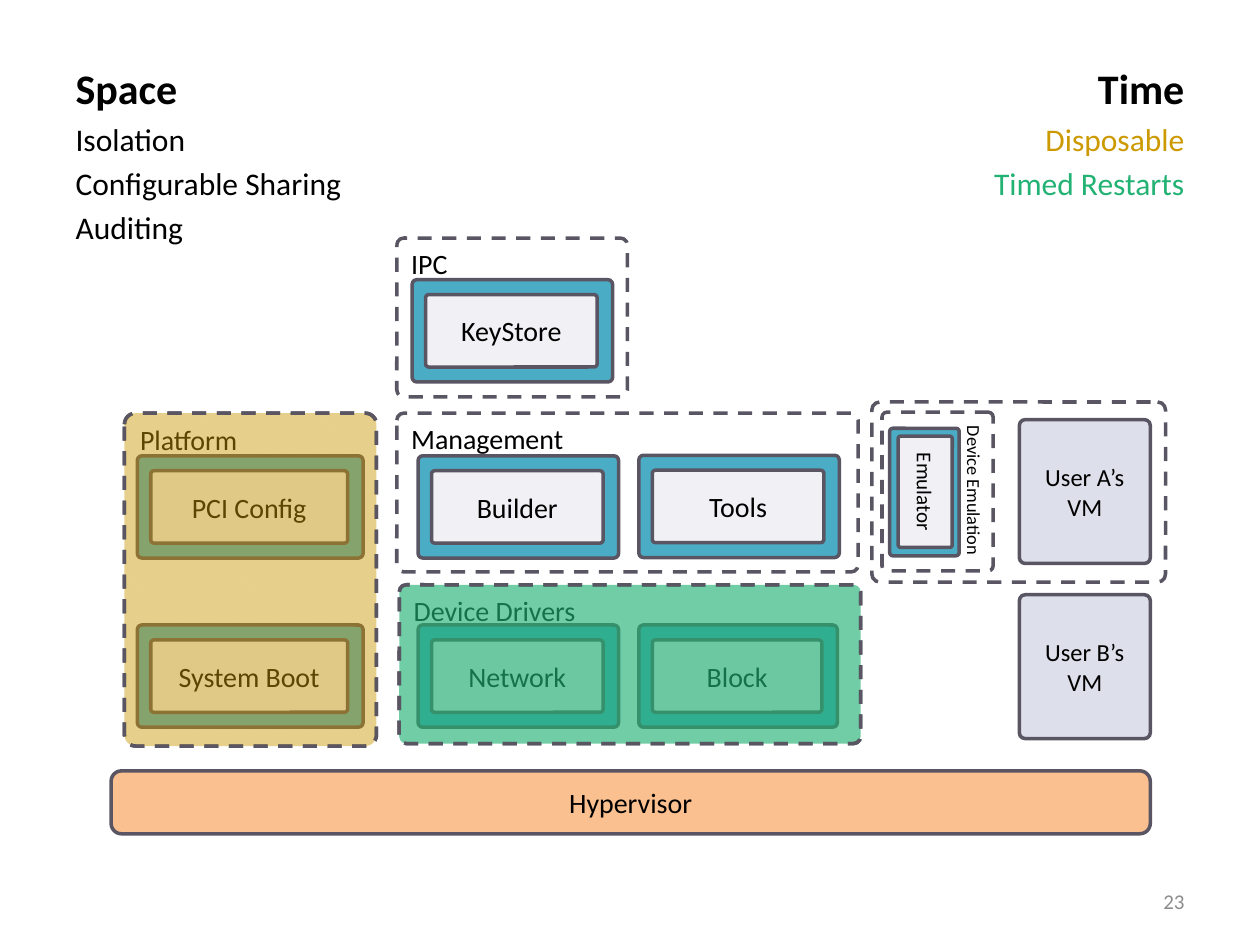
from lxml import etree
from pptx import Presentation
from pptx.dml.color import RGBColor
from pptx.enum.dml import MSO_LINE as Dash, MSO_PATTERN as Pattern
from pptx.enum.shapes import MSO_SHAPE as Shape
from pptx.enum.text import MSO_ANCHOR as Anchor, MSO_AUTO_SIZE as Fit, PP_ALIGN as Align
from pptx.oxml.ns import qn
from pptx.util import Cm, Pt

hue = RGBColor.from_string
BLACK, EDGE, PALE, WHITE = "000000", "595562", "F1F1F5", "FFFFFF"
BLUE, LILAC, PEACH = "4BACC6", "DDDFEA", "FAC090"
GOLD, GREEN, GREY = "CC9900", "22B273", "8C8C8C"


def style(par, size, color=BLACK, align=Align.LEFT, bold=False):
    """Align a paragraph and set the font of its runs."""
    par.alignment = align
    for run in par.runs:
        font = run.font
        font.name, font.size, font.bold = "Calibri", Pt(size), bold
        font.color.rgb = hue(color)


def box(at, fill=None, text="", size=16, group=False, turn=0, adj=0.044):
    """Add a rounded box; a group has a dashed edge and its label at top left."""
    shape = slide.shapes.add_shape(Shape.ROUNDED_RECTANGLE, *map(Cm, at))
    shape.shadow.inherit = False
    shape.adjustments[0] = adj
    shape.rotation = turn
    if fill:
        shape.fill.solid()
        shape.fill.fore_color.rgb = hue(fill)
    else:
        shape.fill.background()
    shape.line.color.rgb = hue(EDGE)
    shape.line.width = Pt(2)
    if group:
        shape.line.dash_style = Dash.DASH
    if text:
        frame = shape.text_frame
        frame.text = text
        frame.word_wrap = True
        frame.vertical_anchor = Anchor.TOP if group else Anchor.MIDDLE
        style(frame.paragraphs[0], size, align=Align.LEFT if group else Align.CENTER)
    return shape


deck = Presentation()
deck.slide_width, deck.slide_height = Cm(25.4), Cm(19.05)
slide = deck.slides.add_slide(deck.slide_layouts[3])
title, left, right = slide.placeholders
title.element.getparent().remove(title.element)

# Two lists at the top
lists = [
    (left, 1.27, 11.38, Align.LEFT,
     [("Space", BLACK), ("Isolation", BLACK),
      ("Configurable Sharing", BLACK), ("Auditing", BLACK)]),
    (right, 12.67, 11.46, Align.RIGHT,
     [("Time", BLACK), ("Disposable", GOLD), ("Timed Restarts", GREEN)]),
]
for body, x, width, align, items in lists:
    body.left, body.top, body.width, body.height = map(Cm, (x, 1.14, width, 4.14))
    frame = body.text_frame
    frame.text = "\n".join(text for text, _ in items)
    frame.auto_size = Fit.NONE
    frame.vertical_anchor = Anchor.TOP
    for i, (par, (_, color)) in enumerate(zip(frame.paragraphs, items)):
        size = 18 if i else 24
        style(par, size, color, align, bold=i == 0)
        par.space_before = Pt(size * 0.2)
        props = par._p.get_or_add_pPr()
        props.set("marL", "0")
        props.set("indent", "0")
        etree.SubElement(props, qn("a:buNone"))

# Slide number
number = slide.shapes.add_textbox(*map(Cm, (18.21, 17.65, 5.92, 1.02)))
frame = number.text_frame
frame.text = "23"
frame.word_wrap = True
frame.vertical_anchor = Anchor.MIDDLE
style(frame.paragraphs[0], 12, GREY, Align.RIGHT)

# Base layer and guest machines
box((2.24, 15.54, 20.95, 1.27), PEACH, "Hypervisor", adj=0.167)
for name, y in (("User A’s VM", 8.46), ("User B’s VM", 11.99)):
    box((20.55, y, 2.64, 2.9), LILAC, name, 14)

# Dashed groups
platform = (2.51, 8.33, 5.08, 6.71)
drivers = (8.05, 11.79, 9.3, 3.2)
base = box(platform, PALE, "Platform", group=True)
base.fill.patterned()
base.fill.pattern = Pattern.DARK_DOWNWARD_DIAGONAL
base.fill.fore_color.rgb = hue(PALE)
base.fill.back_color.rgb = hue(WHITE)
box(drivers, text="Device Drivers", group=True)
box((8, 8.33, 9.3, 3.2), text="Management", group=True)
box((8, 4.8, 4.65, 3.2), text="IPC", group=True)
box((17.3, 8.79, 3.2, 2.24), text="Device Emulation", size=10.5, group=True, turn=90)

# Components: a blue rim around a pale core
parts = [
    ("System Boot", 2.77, 12.6, 4.55),
    ("PCI Config", 2.77, 9.19, 4.55),
    ("Network", 8.43, 12.6, 4.04),
    ("Block", 12.88, 12.6, 4.0),
    ("Builder", 8.43, 9.19, 4.04),
    ("Tools", 12.88, 9.18, 4.04),
    ("KeyStore", 8.31, 5.64, 4.04),
]
for name, x, y, width in parts:
    box((x, y, width, 2.06), BLUE)
    box((x + 0.27, y + 0.3, width - 0.58, 1.46), PALE, name)
box((17.35, 9.22, 2.57, 1.4), BLUE, turn=90)
box((17.53, 9.37, 2.24, 1.09), PALE, "Emulator", 12, turn=90)
box((18.72, 6.96, 3.63, 5.92), group=True, turn=90)

# Translucent highlights
for at, color, alpha in ((platform, GOLD, 45), (drivers, GREEN, 64)):
    cover = box(at, color, group=True)
    tint = cover.element.spPr.find(qn("a:solidFill"))[0]
    etree.SubElement(tint, qn("a:alpha"), val=str(alpha * 1000))

deck.save("out.pptx")
